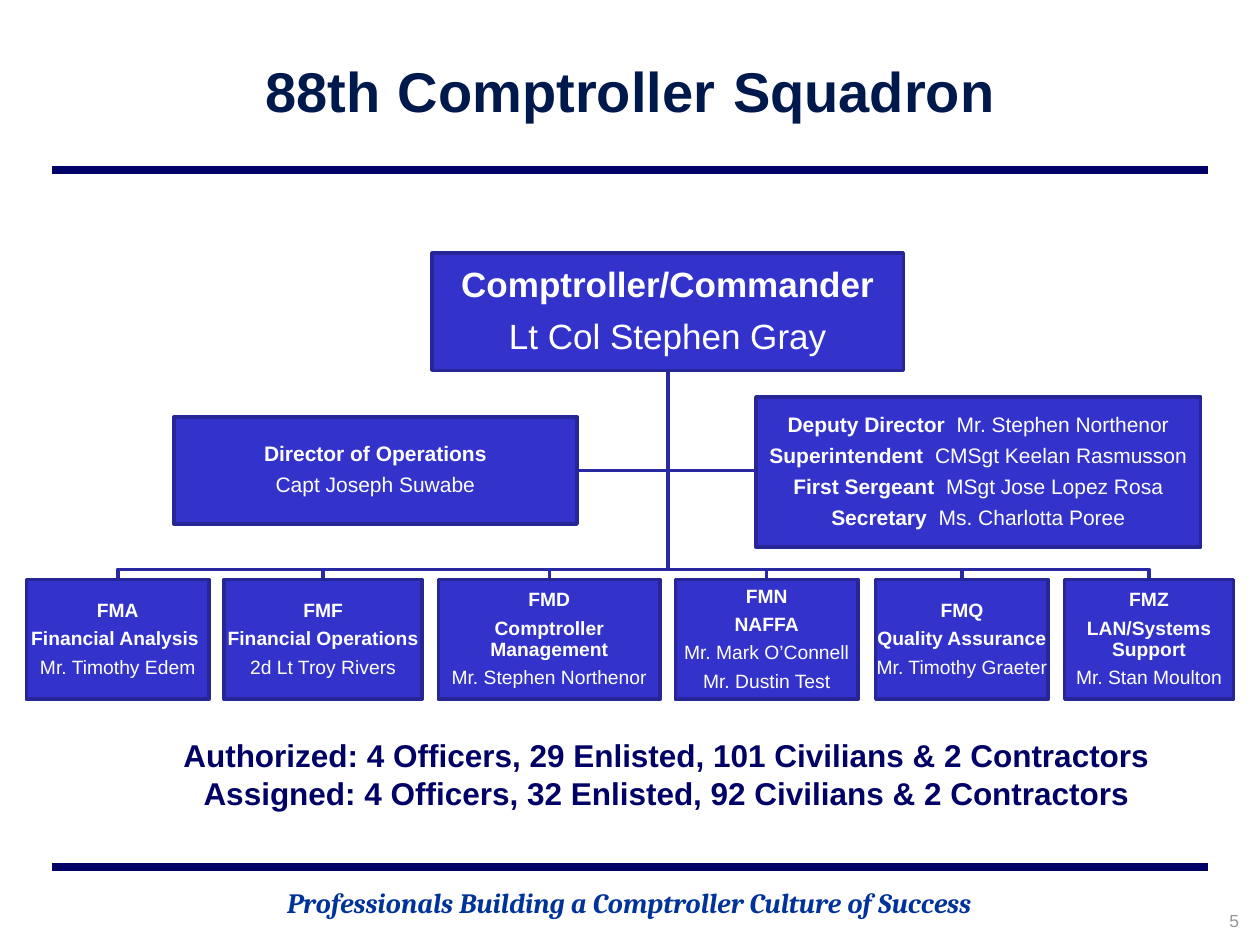
from dataclasses import dataclass

from lxml import etree
from pptx import Presentation
from pptx.dml.color import RGBColor
from pptx.enum.shapes import MSO_CONNECTOR, MSO_SHAPE
from pptx.enum.text import MSO_ANCHOR, PP_ALIGN
from pptx.oxml.ns import qn
from pptx.util import Inches, Pt

RECT = MSO_SHAPE.RECTANGLE
STRAIGHT = MSO_CONNECTOR.STRAIGHT
MIDDLE, TOP = MSO_ANCHOR.MIDDLE, MSO_ANCHOR.TOP
CENTER, LEFT = PP_ALIGN.CENTER, PP_ALIGN.LEFT


@dataclass(frozen=True)
class Theme:
    sans: str = "Arial"
    serif: str = "Cambria"
    navy: str = "000066"
    title: str = "00194C"
    motto: str = "003399"
    grey: str = "969696"
    white: str = "FFFFFF"
    box: str = "3333CC"
    edge: str = "262697"
    link: str = "2929A3"
    title_size: int = 32
    gap_size: int = 36
    head_size: int = 20
    total_size: int = 18
    motto_size: int = 16
    staff_size: int = 12
    unit_size: int = 11
    page_size: int = 10
    rule_width: float = 4.5
    line_width: float = 2


T = Theme()


def color(code):
    return RGBColor.from_string(code)


def add_run(para, text, size, tint, bold=False, italic=False, face=T.sans):
    run = para.add_run()
    run.text = text
    font = run.font
    font.name, font.size = face, Pt(size)
    font.bold, font.italic = bold, italic
    font.color.rgb = color(tint)


def add_paras(frame, count, align):
    paras = [frame.paragraphs[0]]
    paras += [frame.add_paragraph() for _ in range(count - 1)]
    for para in paras:
        para.alignment = align
    return paras


def add_text(slide, box, lines, align=CENTER, anchor=TOP, **style):
    """Place a text box; each line is a list of (text, size) runs."""
    frame = slide.shapes.add_textbox(*map(Inches, box)).text_frame
    frame.word_wrap = True
    frame.vertical_anchor = anchor
    for para, runs in zip(add_paras(frame, len(lines), align), lines):
        for text, size in runs:
            add_run(para, text, size, **style)


def add_rule(slide, x, y, width):
    rule = slide.shapes.add_connector(
        STRAIGHT, Inches(x), Inches(y), Inches(x + width), Inches(y))
    rule.line.color.rgb = color(T.navy)
    rule.line.width = Pt(T.rule_width)
    etree.SubElement(rule._element.spPr, qn("a:effectLst"))


def add_link(slide, points):
    pts = [(Inches(x), Inches(y)) for x, y in points]
    path = slide.shapes.build_freeform(*pts[0])
    path.add_line_segments(pts[1:], close=False)
    link = path.convert_to_shape()
    link.shadow.inherit = False
    link.fill.background()
    link.line.color.rgb = color(T.link)
    link.line.width = Pt(T.line_width)


def add_box(slide, box, lines, size):
    """Place a chart box; each line is a (bold text, plain text) pair."""
    shape = slide.shapes.add_shape(RECT, *map(Inches, box))
    shape.shadow.inherit = False
    shape.fill.solid()
    shape.fill.fore_color.rgb = color(T.box)
    shape.line.color.rgb = color(T.edge)
    shape.line.width = Pt(T.line_width)
    frame = shape.text_frame
    frame.word_wrap = True
    frame.vertical_anchor = MIDDLE
    frame.margin_left = frame.margin_right = 0
    frame.margin_top = frame.margin_bottom = Inches(0.01)
    for para, pair in zip(add_paras(frame, len(lines), CENTER), lines):
        para.line_spacing = 0.9
        para.space_after = Pt(0.4 * size)
        for text, bold in zip(pair, (True, False)):
            if text:
                add_run(para, text, size, T.white, bold)


HEAD = [("Comptroller/Commander", ""), ("", "Lt Col Stephen Gray")]
OPS = [("Director of Operations", ""), ("", "Capt Joseph Suwabe")]
STAFF = [
    ("Deputy Director  ", "Mr. Stephen Northenor"),
    ("Superintendent  ", "CMSgt Keelan Rasmusson"),
    ("First Sergeant  ", "MSgt Jose Lopez Rosa"),
    ("Secretary  ", "Ms. Charlotta Poree"),
]
# left, width, code, name, people
UNITS = [
    (0.21, 1.45, "FMA", "Financial Analysis ", ["Mr. Timothy Edem"]),
    (1.78, 1.57, "FMF", "Financial Operations", ["2d Lt Troy Rivers"]),
    (3.48, 1.76, "FMD", "Comptroller Management", ["Mr. Stephen Northenor"]),
    (5.36, 1.45, "FMN", "NAFFA", ["Mr. Mark O’Connell", "Mr. Dustin Test"]),
    (6.95, 1.37, "FMQ", "Quality Assurance", ["Mr. Timothy Graeter"]),
    (8.45, 1.34, "FMZ", "LAN/Systems Support", ["Mr. Stan Moulton"]),
]


def add_chart(slide, x, y):
    """Place the organization chart with its top left corner at x, y."""
    head = (x + 3.22, y, 3.74, 0.93)
    ops = (x + 1.17, y + 1.3, 3.2, 0.85)
    staff = (x + 5.79, y + 1.14, 3.53, 1.19)
    row, tall = y + 2.59, 0.95
    bus = row - 0.08
    mid, base = head[0] + head[2] / 2, y + head[3]
    side = ops[1] + ops[3] / 2
    shift = x - UNITS[0][0]

    for end in (ops[0] + ops[2], staff[0]):
        add_link(slide, [(mid, base), (mid, side), (end, side)])
    for left, width, *_ in UNITS:
        stem = left + shift + width / 2
        add_link(slide, [(mid, base), (mid, bus), (stem, bus), (stem, row)])

    add_box(slide, head, HEAD, T.head_size)
    for left, width, code, name, people in UNITS:
        lines = [(code, ""), (name, "")] + [("", who) for who in people]
        add_box(slide, (left + shift, row, width, tall), lines, T.unit_size)
    add_box(slide, staff, STAFF, T.staff_size)
    add_box(slide, ops, OPS, T.staff_size)


def add_title(slide, box):
    big, gap = T.title_size, (" ", T.gap_size)
    runs = [("88th", big), gap, ("Comptroller", big), gap, ("Squadron", big)]
    add_text(slide, box, [runs], anchor=MIDDLE, tint=T.title, bold=True)


def add_totals(slide, box):
    lines = [
        "Authorized: 4 Officers, 29 Enlisted, 101 Civilians & 2 Contractors",
        "Assigned: 4 Officers, 32 Enlisted, 92 Civilians & 2 Contractors",
    ]
    add_text(slide, box, [[(line, T.total_size)] for line in lines],
             tint=T.navy, bold=True)


def add_footer(slide, motto, page):
    text = "Professionals Building a Comptroller Culture of Success"
    add_text(slide, motto, [[(text, T.motto_size)]], tint=T.motto,
             bold=True, italic=True, face=T.serif)
    add_text(slide, page, [[("5", T.page_size)]], align=LEFT, tint=T.grey)


def main():
    deck = Presentation()
    deck.slide_width, deck.slide_height = Inches(10), Inches(7.5)
    slide = deck.slides.add_slide(deck.slide_layouts[6])
    for y in (1.35, 6.88):
        add_rule(slide, 0.41, y, 9.18)
    add_chart(slide, 0.21, 2.01)
    add_totals(slide, (1.33, 5.79, 7.92, 0.71))
    add_title(slide, (0, 0.34, 10, 0.71))
    add_footer(slide, (1.41, 6.98, 7.17, 0.37), (9.66, 7.17, 0.33, 0.33))
    deck.save("out.pptx")


if __name__ == "__main__":
    main()
